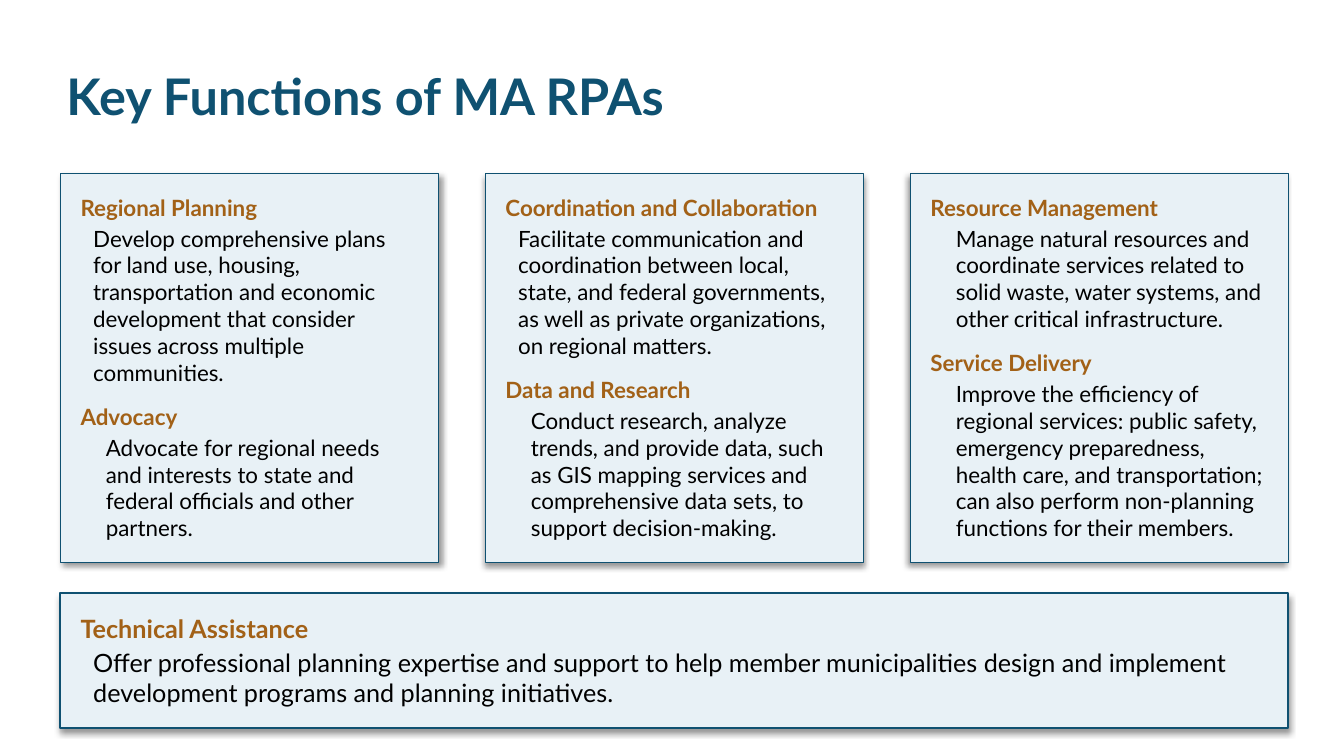
from lxml import etree
from pptx import Presentation
from pptx.dml.color import RGBColor
from pptx.enum.shapes import MSO_SHAPE
from pptx.enum.text import MSO_ANCHOR, MSO_AUTO_SIZE, PP_ALIGN
from pptx.oxml.ns import qn
from pptx.util import Cm, Pt

RECTANGLE = MSO_SHAPE.RECTANGLE
TOP, MIDDLE = MSO_ANCHOR.TOP, MSO_ANCHOR.MIDDLE
LEFT = PP_ALIGN.LEFT
NO_AUTOFIT = MSO_AUTO_SIZE.NONE

TEAL = RGBColor(0x0F, 0x51, 0x71)
PALE_BLUE = RGBColor(0xE8, 0xF1, 0xF6)
BRONZE = RGBColor(0xA2, 0x61, 0x17)
BLACK = RGBColor(0, 0, 0)

NARROW, WIDE = Cm(0.32), Cm(0.64)
CARD_LEFT, CARD_TOP, CARD_PITCH = 1.52, 4.37, 10.71
CARD_WIDTH, CARD_HEIGHT = 9.53, 9.8

COLUMNS = [
    (45, [
        ("Regional Planning", NARROW,
         "Develop comprehensive plans for land use, housing, transportation and "
         "economic development that consider issues across multiple communities."),
        ("Advocacy", WIDE,
         "Advocate for regional needs and interests to state and federal officials "
         "and other partners."),
    ]),
    (90, [
        ("Coordination and Collaboration", NARROW,
         "Facilitate communication and coordination between local, state, and federal "
         "governments, as well as private organizations, on regional matters."),
        ("Data and Research", WIDE,
         "Conduct research, analyze trends, and provide data, such as GIS mapping "
         "services and comprehensive data sets, to support decision-making."),
    ]),
    (135, [
        ("Resource Management", WIDE,
         "Manage natural resources and coordinate services related to solid waste, "
         "water systems, and other critical infrastructure."),
        ("Service Delivery", WIDE,
         "Improve the efficiency of regional services: public safety, emergency "
         "preparedness, health care, and transportation; can also perform "
         "non-planning functions for their members."),
    ]),
]
ASSISTANCE = [
    ("Technical Assistance", NARROW,
     "Offer professional planning expertise and support to help member municipalities "
     "design and implement development programs and planning initiatives."),
]


class FunctionsSlide:
    font = "Lato"
    inset = Cm(0.51)

    def __init__(self, deck):
        self.slide = deck.slides.add_slide(deck.slide_layouts[5])

    def format_text(self, paragraph, size, color, bold):
        paragraph.alignment = LEFT
        for run in paragraph.runs:
            run.font.name = self.font
            run.font.size = Pt(size)
            run.font.bold = bold
            run.font.color.rgb = color

    def title(self, text):
        heading = self.slide.shapes.title
        heading.left, heading.top = Cm(1.42), Cm(1.42)
        heading.width, heading.height = Cm(29.21), Cm(2.16)
        frame = heading.text_frame
        frame.text = text
        frame.auto_size = NO_AUTOFIT
        frame.vertical_anchor = MIDDLE
        frame.paragraphs[0].line_spacing = 0.9
        self.format_text(frame.paragraphs[0], 36, TEAL, True)

    def shadow(self, card, angle):
        card.shadow.inherit = False
        effects = card._element.spPr.find(qn("a:effectLst"))
        outer = etree.SubElement(
            effects, qn("a:outerShdw"), blurRad=str(Pt(4)), dist=str(Pt(3)),
            dir=str(angle * 60000), algn="ctr", rotWithShape="0")
        tint = etree.SubElement(outer, qn("a:srgbClr"), val=str(BLACK))
        etree.SubElement(tint, qn("a:alpha"), val="40000")

    def card(self, left, top, width, height, functions, size, line_width, angle):
        card = self.slide.shapes.add_shape(
            RECTANGLE, Cm(left), Cm(top), Cm(width), Cm(height))
        card.fill.solid()
        card.fill.fore_color.rgb = PALE_BLUE
        card.line.color.rgb = TEAL
        card.line.width = Pt(line_width)
        self.shadow(card, angle)

        frame = card.text_frame
        frame.word_wrap = True
        frame.vertical_anchor = TOP
        frame.margin_left = frame.margin_right = self.inset
        frame.margin_top = frame.margin_bottom = self.inset
        frame.text = "\n".join(
            line for name, _, description in functions for line in (name, description))
        names, descriptions = frame.paragraphs[::2], frame.paragraphs[1::2]
        for name, description, (_, indent, _) in zip(names, descriptions, functions):
            name.space_after = Pt(3)
            self.format_text(name, size, BRONZE, True)
            description.space_after = Pt(12)
            description._p.get_or_add_pPr().set("marL", str(indent))
            self.format_text(description, size, BLACK, False)


def main():
    deck = Presentation()
    deck.slide_width, deck.slide_height = Cm(33.87), Cm(19.05)
    page = FunctionsSlide(deck)
    page.title("Key Functions of MA RPAs")
    for column, (angle, functions) in enumerate(COLUMNS):
        page.card(CARD_LEFT + column * CARD_PITCH, CARD_TOP, CARD_WIDTH, CARD_HEIGHT,
                  functions, 16, 1, angle)
    page.card(CARD_LEFT, 14.94, 2 * CARD_PITCH + CARD_WIDTH, 3.4,
              ASSISTANCE, 18, 1.5, 90)
    deck.save("out.pptx")


if __name__ == "__main__":
    main()
